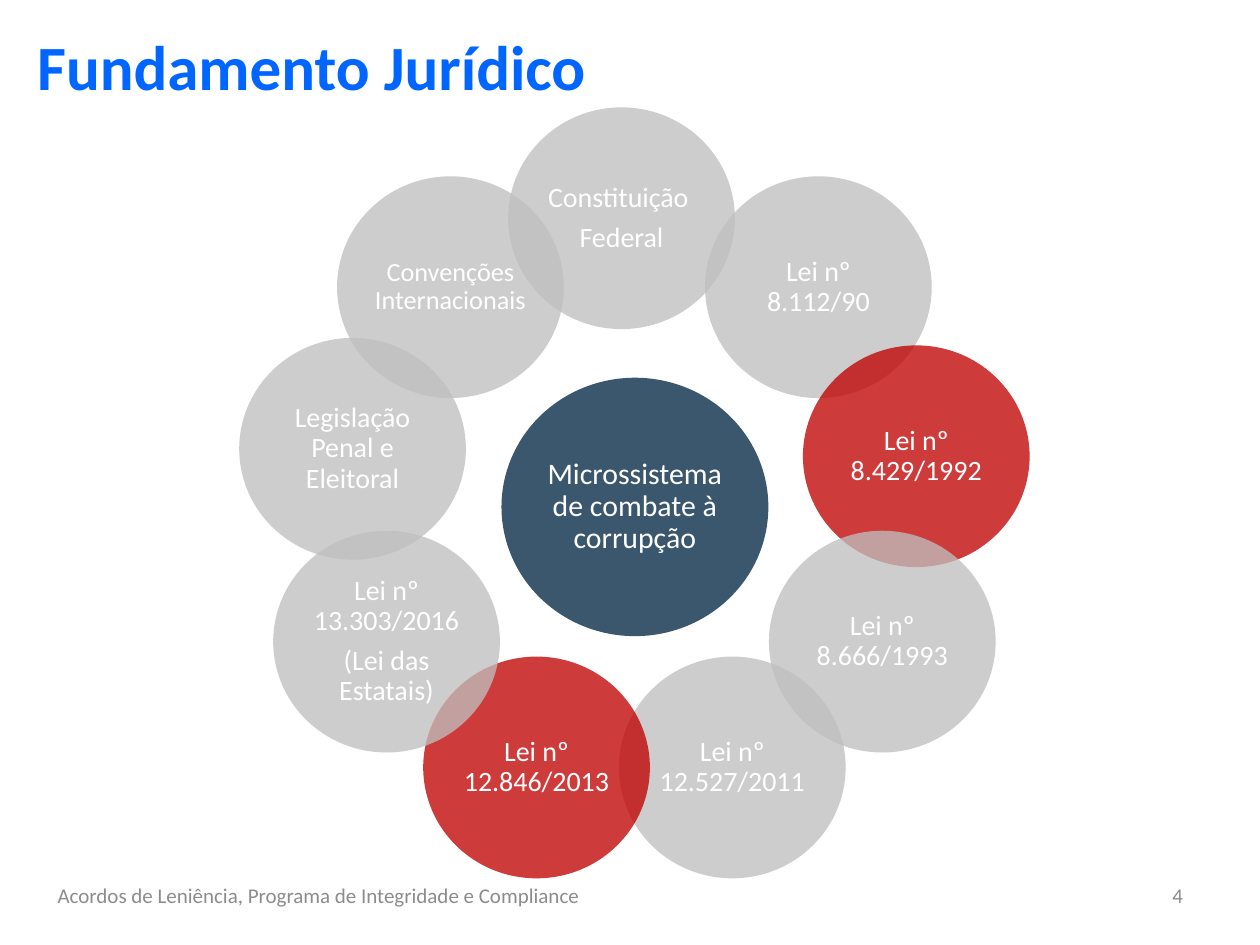
import math

import pptx
import pptx.dml.color
import pptx.enum.shapes
import pptx.enum.text
import pptx.oxml.ns
import pptx.util
from lxml import etree

Cm, Pt = pptx.util.Cm, pptx.util.Pt
ALIGN = pptx.enum.text.PP_ALIGN
ANCHOR = pptx.enum.text.MSO_ANCHOR

NAVY, GREY, RED = "002543", "BFBFBF", "C00000"
WHITE, BLUE, FOOTER = "FFFFFF", "0066FF", "8C8C8C"


def color(value):
    return pptx.dml.color.RGBColor.from_string(value)


class SlideWriter:
    font = "Calibri"
    opacity = 77  # percent

    def __init__(self, page):
        self.page = page

    def add_run(self, para, text, size, ink, bold=False):
        span = para.add_run()
        span.text = text
        span.font.name = self.font
        span.font.size = Pt(size)
        span.font.bold = bold
        span.font.color.rgb = color(ink)

    def text(self, text, left, top, width, height, size, ink,
             align=ALIGN.LEFT, anchor=ANCHOR.MIDDLE, bold=False):
        box = self.page.shapes.add_textbox(Cm(left), Cm(top), Cm(width), Cm(height))
        frame = box.text_frame
        frame.word_wrap = True
        frame.vertical_anchor = anchor
        para = frame.paragraphs[0]
        para.alignment = align
        self.add_run(para, text, size, ink, bold)

    def circle(self, lines, center_x, center_y, width, height, fill, size):
        shape = self.page.shapes.add_shape(
            pptx.enum.shapes.MSO_SHAPE.OVAL,
            Cm(center_x - width / 2), Cm(center_y - height / 2), Cm(width), Cm(height))
        shape.shadow.inherit = False
        shape.line.fill.background()
        shape.fill.solid()
        shape.fill.fore_color.rgb = color(fill)
        tint = shape.fill._xPr.find(".//" + pptx.oxml.ns.qn("a:srgbClr"))
        etree.SubElement(tint, pptx.oxml.ns.qn("a:alpha"), val=str(self.opacity * 1000))

        frame = shape.text_frame
        frame.word_wrap = True
        frame.vertical_anchor = ANCHOR.MIDDLE
        frame.margin_left = frame.margin_right = Cm(0.05)
        frame.margin_top = frame.margin_bottom = Cm(0.05)
        for index, line in enumerate(lines):
            para = frame.add_paragraph() if index else frame.paragraphs[0]
            para.alignment = ALIGN.CENTER
            para.line_spacing = 0.9
            para.space_after = Pt(0.35 * size)
            self.add_run(para, line, size, WHITE)


def main():
    deck = pptx.Presentation()
    deck.slide_width, deck.slide_height = Cm(25.4), Cm(19.05)
    writer = SlideWriter(deck.slides.add_slide(deck.slide_layouts[6]))

    # Central theme
    writer.circle(["Microssistema de combate à corrupção"],
                  12.8, 10.22, 5.38, 5.21, NAVY, 17)

    # Ring of laws, clockwise from the top: lines, fill, size, shift x, shift y
    laws = [
        (["Constituição ", "Federal"], GREY, 16, -0.26, 0.12),
        (["Lei nº 8.112/90"], GREY, 16, 0, 0.16),
        (["Lei nº 8.429/1992"], RED, 16, 0, 0.15),
        (["Lei nº 8.666/1993"], GREY, 16, 0, 0),
        (["Lei nº 12.527/2011"], GREY, 16, 0, 0),
        (["Lei nº 12.846/2013"], RED, 16, 0, 0),
        (["Lei nº 13.303/2016", "(Lei das Estatais)"], GREY, 16, 0, 0),
        (["Legislação Penal e Eleitoral"], GREY, 16, 0, 0),
        (["Convenções Internacionais"], GREY, 15, 0, 0.16),
    ]
    ring_x, ring_y, radius = 12.79, 10.05, 5.77
    for index, (lines, fill, size, shift_x, shift_y) in enumerate(laws):
        angle = 2 * math.pi * index / len(laws)
        writer.circle(lines,
                      ring_x + radius * math.sin(angle) + shift_x,
                      ring_y - radius * math.cos(angle) + shift_y,
                      4.57, 4.47, fill, size)

    # Title
    writer.text("Fundamento Jurídico", 0.5, 0.43, 11.75, 1.7, 36, BLUE,
                anchor=ANCHOR.TOP, bold=True)

    # Page number and footer
    writer.text("4", 19.3, 17.53, 4.8, 1.02, 12, FOOTER, align=ALIGN.RIGHT)
    writer.text("Acordos de Leniência, Programa de Integridade e Compliance",
                0.71, 17.53, 11.43, 1.02, 12, FOOTER, align=ALIGN.CENTER)

    deck.save("out.pptx")


if __name__ == "__main__":
    main()
